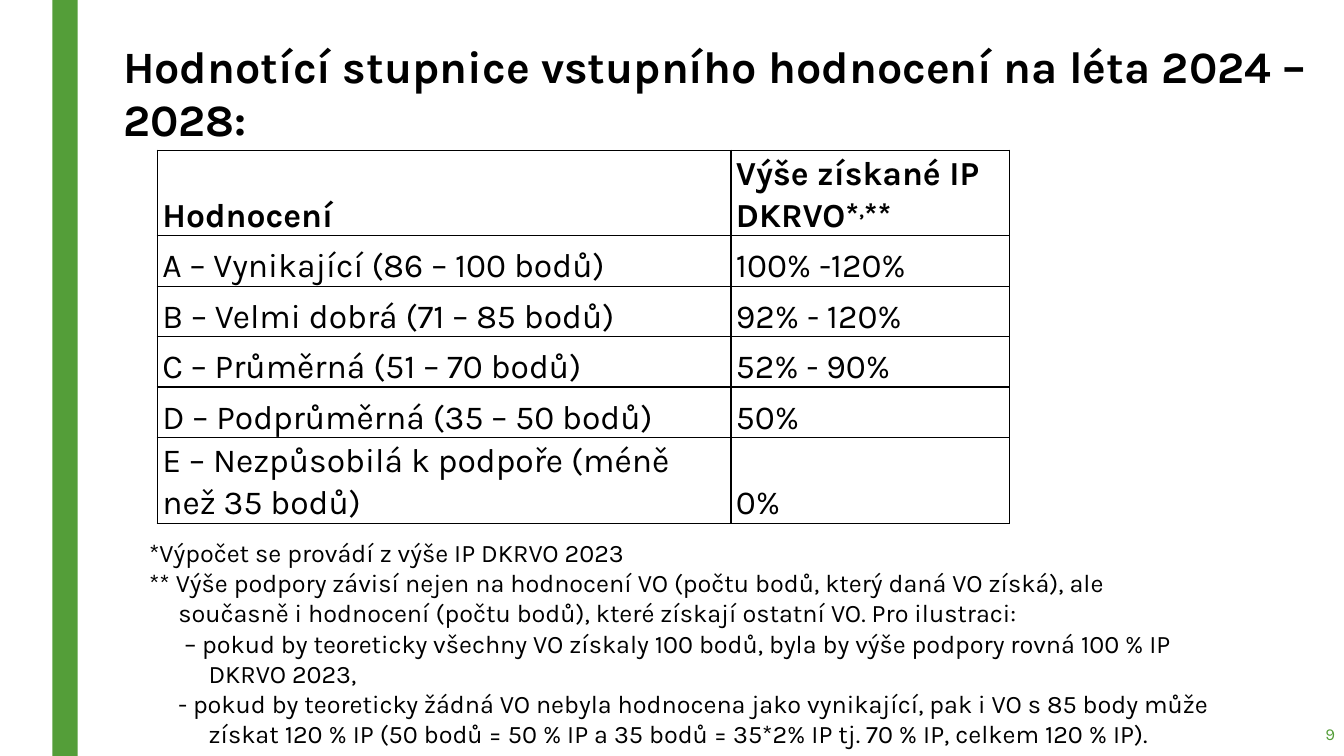
"""Build the slide with the rating scale for the 2024 – 2028 entry evaluation."""
from lxml.etree import SubElement
from pptx import Presentation
from pptx.dml.color import RGBColor
from pptx.enum.shapes import MSO_SHAPE as Shape
from pptx.enum.text import MSO_ANCHOR as Anchor, MSO_AUTO_SIZE as AutoSize, PP_ALIGN as Align
from pptx.oxml.ns import qn
from pptx.util import Inches, Pt

COLORS = {"green": "549E39", "black": "000000"}
FONT = "Karla"
TITLE = "Hodnotící stupnice vstupního hodnocení na léta 2024 – 2028:"
RATINGS = [
    (["Hodnocení"], ["Výše získané IP DKRVO*", ",", "**"]),
    (["A – Vynikající (86 – 100 bodů)"], ["100% -120%"]),
    (["B – Velmi dobrá (71 – 85 bodů)"], ["92% - 120%"]),
    (["C – Průměrná (51 – 70 bodů)"], ["52% - 90%"]),
    (["D – Podprůměrná (35 – 50 bodů)"], ["50%"]),
    (["E – Nezpůsobilá k podpoře (méně než 35 bodů)"], ["0%"]),
]
COLUMN_WIDTHS = [5.69, 2.76]
ROW_HEIGHTS = [0.85, 0.5, 0.5, 0.5, 0.5, 0.85]
NOTES = [
    ("*Výpočet se provádí z výše IP DKRVO 2023", 0, 0),
    ("** Výše podpory závisí nejen na hodnocení VO (počtu bodů, který daná VO získá), ale "
     "současně i hodnocení (počtu bodů), které získají ostatní VO. Pro ilustraci:", 0.29, -0.29),
    (" – pokud by teoreticky všechny VO získaly 100 bodů, byla by výše podpory rovná "
     "100 % IP DKRVO 2023,", 0.59, -0.3),
    ("- pokud by teoreticky žádná VO nebyla hodnocena jako vynikající, pak i VO s 85 body může "
     "získat 120 % IP (50 bodů = 50 % IP a 35 bodů = 35*2% IP tj. 70 % IP, celkem 120 % IP).",
     0.59, -0.3),
]
PAGE_NUMBER = "9"


def format_runs(paragraph, size, color="black", bold=False):
    for run in paragraph.runs:
        run.font.name = FONT
        run.font.size = Pt(size)
        run.font.bold = bold
        run.font.color.rgb = RGBColor.from_string(COLORS[color])


def add_text_box(slide, left, top, width, height):
    box = slide.shapes.add_textbox(Inches(left), Inches(top), Inches(width), Inches(height))
    box.text_frame.word_wrap = True
    return box.text_frame


def add_borders(cell):
    properties = cell._tc.get_or_add_tcPr()
    for position, side in enumerate(("lnL", "lnR", "lnT", "lnB")):
        line = SubElement(properties, qn(f"a:{side}"), w=str(Pt(1)))
        fill = SubElement(line, qn("a:solidFill"))
        SubElement(fill, qn("a:srgbClr"), val=COLORS["black"])
        properties.insert(position, line)


def add_side_bar(slide):
    bar = slide.shapes.add_shape(Shape.RECTANGLE, Inches(0.52), 0, Inches(0.25), Inches(7.5))
    bar.shadow.inherit = False
    bar.fill.solid()
    bar.fill.fore_color.rgb = RGBColor.from_string(COLORS["green"])
    bar.line.fill.background()


def set_title(slide):
    title = slide.shapes.title
    title.left, title.top, title.width, title.height = map(Inches, (1.12, 0.33, 12.31, 1.17))
    frame = title.text_frame
    frame.text = TITLE
    frame.word_wrap = True
    frame.auto_size = AutoSize.NONE
    frame.vertical_anchor = Anchor.TOP
    frame.paragraphs[0].alignment = Align.LEFT
    format_runs(frame.paragraphs[0], 32, bold=True)


def fill_cell(cell, pieces, bold):
    cell.fill.background()
    add_borders(cell)
    cell.vertical_anchor = Anchor.BOTTOM
    cell.margin_left = cell.margin_right = Inches(0.05)
    cell.margin_top = cell.margin_bottom = 0
    paragraph = cell.text_frame.paragraphs[0]
    paragraph.line_spacing = 1.07
    for piece in pieces:
        run = paragraph.add_run()
        run.text = piece
        if piece == ",":
            run.font._element.set("baseline", "30000")
    format_runs(paragraph, 24, bold=bold)


def add_rating_table(slide):
    table = slide.shapes.add_table(
        len(RATINGS), len(COLUMN_WIDTHS), Inches(1.56), Inches(1.49),
        Inches(sum(COLUMN_WIDTHS)), Inches(sum(ROW_HEIGHTS))).table
    table.first_row = table.horz_banding = False
    for column, width in zip(table.columns, COLUMN_WIDTHS):
        column.width = Inches(width)
    for row_index, (row, height) in enumerate(zip(table.rows, ROW_HEIGHTS)):
        row.height = Inches(height)
        for cell, pieces in zip(row.cells, RATINGS[row_index]):
            fill_cell(cell, pieces, bold=row_index == 0)


def add_notes(slide):
    frame = add_text_box(slide, 1.38, 5.28, 10.72, 2.22)
    for index, (text, margin, indent) in enumerate(NOTES):
        paragraph = frame.add_paragraph() if index else frame.paragraphs[0]
        paragraph.text = text
        properties = paragraph._p.get_or_add_pPr()
        properties.set("marL", str(Inches(margin)))
        properties.set("indent", str(Inches(indent)))
        format_runs(paragraph, 18)


def add_page_number(slide):
    frame = add_text_box(slide, 11.59, 7.06, 1.75, 0.44)
    frame.text = PAGE_NUMBER
    frame.vertical_anchor = Anchor.MIDDLE
    frame.paragraphs[0].alignment = Align.RIGHT
    format_runs(frame.paragraphs[0], 12, "green")


def main():
    presentation = Presentation()
    presentation.slide_width, presentation.slide_height = Inches(13.33), Inches(7.5)
    slide = presentation.slides.add_slide(presentation.slide_layouts[5])
    add_side_bar(slide)
    set_title(slide)
    add_rating_table(slide)
    add_notes(slide)
    add_page_number(slide)
    presentation.save("out.pptx")


if __name__ == "__main__":
    main()
